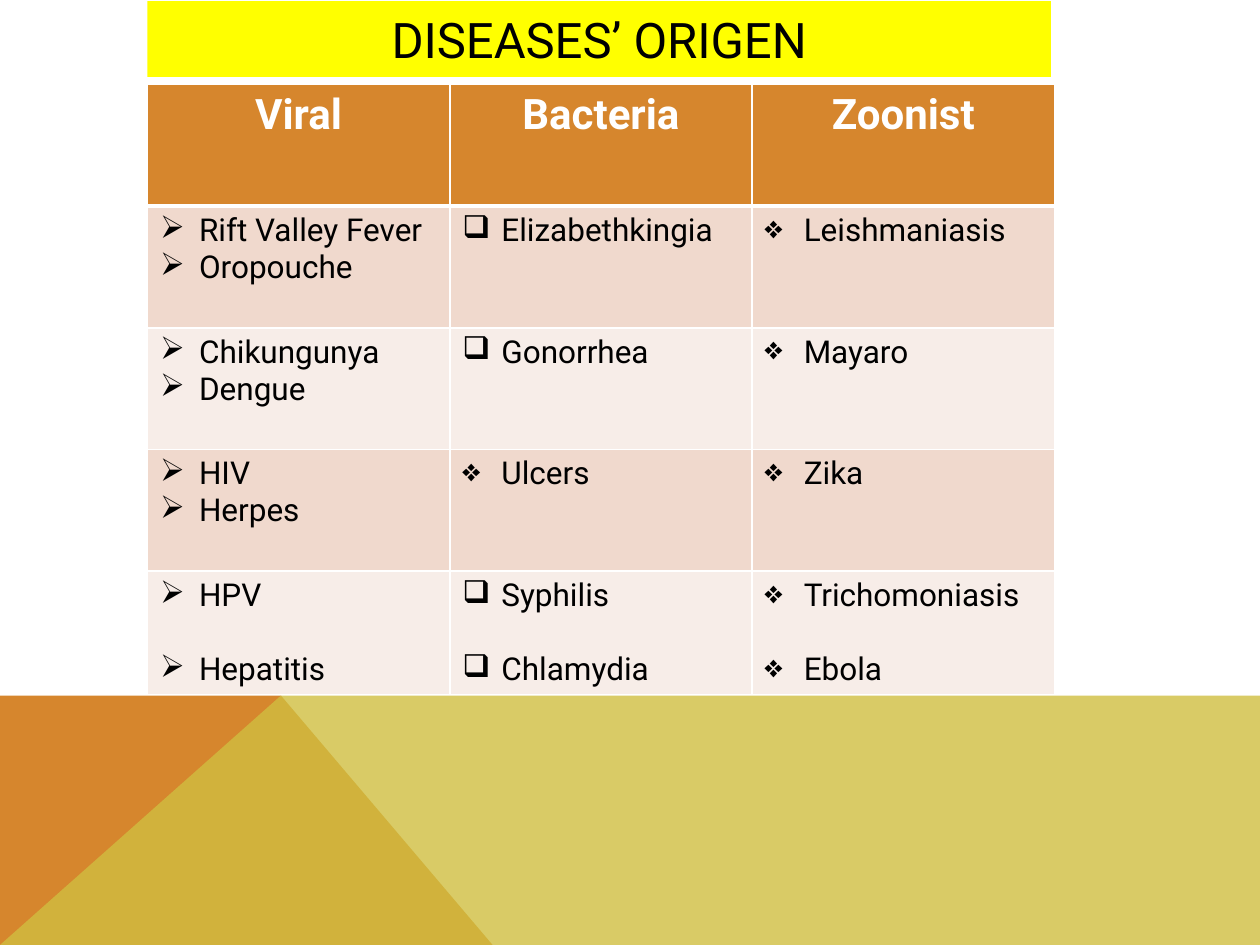
from lxml import etree
from pptx import Presentation
from pptx.dml.color import RGBColor
from pptx.enum.text import MSO_ANCHOR, PP_ALIGN
from pptx.oxml.ns import qn
from pptx.util import Inches, Pt

CENTER, MIDDLE = PP_ALIGN.CENTER, MSO_ANCHOR.MIDDLE
TITLE_ONLY = 5
FONT = "Roboto"

BLACK = RGBColor(0x00, 0x00, 0x00)
WHITE = RGBColor(0xFF, 0xFF, 0xFF)
YELLOW = RGBColor(0xFF, 0xFF, 0x00)
ORANGE = RGBColor(0xD6, 0x86, 0x2D)
OLIVE = RGBColor(0xD0, 0xBE, 0x40)
ROW_TINTS = (RGBColor(0xF0, 0xD9, 0xCD), RGBColor(0xF7, 0xED, 0xE8))

# Slide grid, in inches
WIDTH, HEIGHT = 10, 7.5
LEFT, TABLE_TOP = 1.17, 0.67
COLUMN, ROW = 2.4, 0.966
BAND_TOP, PEAK, SLOPE_END = 5.52, 2.23, 3.91
INDENT = Inches(0.31)
BLANK_LINE = Pt(21)

ARROW, BOX, DIAMOND = "➢", "❑", "❖"
HEADERS = ("Viral", "Bacteria", "Zoonist")
# Each cell: bullet, then its diseases
DISEASES = (
    ((ARROW, "Rift Valley Fever", "Oropouche"), (BOX, "Elizabethkingia"), (DIAMOND, "Leishmaniasis")),
    ((ARROW, "Chikungunya", "Dengue"), (BOX, "Gonorrhea"), (DIAMOND, "Mayaro")),
    ((ARROW, "HIV", "Herpes"), (DIAMOND, "Ulcers"), (DIAMOND, "Zika")),
    ((ARROW, "HPV", "Hepatitis"), (BOX, "Syphilis", "Chlamydia"), (DIAMOND, "Trichomoniasis", "Ebola")),
)


def set_font(paragraph, size, color, bold=False):
    font = paragraph.font
    font.name, font.size, font.bold = FONT, Pt(size), bold
    font.color.rgb = color


def add_band(slide, points, color, opacity=None):
    corners = [(Inches(x), Inches(y)) for x, y in points]
    builder = slide.shapes.build_freeform(*corners[0])
    builder.add_line_segments(corners[1:], close=True)
    band = builder.convert_to_shape()
    band.shadow.inherit = False
    band.line.fill.background()
    band.fill.solid()
    band.fill.fore_color.rgb = color
    if opacity is not None:
        srgb = band.fill._xPr.find(qn("a:solidFill"))[0]
        etree.SubElement(srgb, qn("a:alpha"), val=str(opacity * 1000))


def format_title(slide, text):
    title = slide.shapes.title
    title.left, title.top = Inches(LEFT), Inches(0.01)
    title.width, title.height = Inches(7.17), Inches(0.6)
    title.fill.solid()
    title.fill.fore_color.rgb = YELLOW
    title.text_frame.text = text
    title.text_frame.vertical_anchor = MIDDLE
    heading = title.text_frame.paragraphs[0]
    heading.alignment = CENTER
    set_font(heading, 28, BLACK)


def add_bullet(paragraph, bullet):
    properties = paragraph._p.get_or_add_pPr()
    properties.set("marL", str(INDENT))
    properties.set("indent", str(-INDENT))
    mark = etree.Element(qn("a:buChar"), char=bullet)
    properties.insert_element_before(mark, "a:tabLst", "a:defRPr", "a:extLst")


def style_cell(cell, fill, top=1, bottom=1):
    # Borders come before the fill in the cell's properties
    properties = cell._tc.get_or_add_tcPr()
    for side, points in (("L", 1), ("R", 1), ("T", top), ("B", bottom)):
        border = etree.SubElement(properties, qn(f"a:ln{side}"), w=str(Pt(points)))
        solid = etree.SubElement(border, qn("a:solidFill"))
        etree.SubElement(solid, qn("a:srgbClr"), val=str(WHITE))
    cell.fill.solid()
    cell.fill.fore_color.rgb = fill


def fill_header(cell, text):
    style_cell(cell, ORANGE, bottom=3)
    cell.text = text
    header = cell.text_frame.paragraphs[0]
    header.alignment = CENTER
    set_font(header, 24, WHITE, bold=True)


def fill_diseases(cell, bullet, names, fill, top, gap):
    style_cell(cell, fill, top=top)
    cell.text = "\n".join(names)
    for index, disease in enumerate(cell.text_frame.paragraphs):
        set_font(disease, 18, BLACK)
        add_bullet(disease, bullet)
        if index:
            disease.space_before = gap


def add_disease_table(slide):
    rows, columns = len(DISEASES) + 1, len(HEADERS)
    table = slide.shapes.add_table(
        rows, columns, Inches(LEFT), Inches(TABLE_TOP),
        Inches(COLUMN * columns), Inches(ROW * rows)).table
    for column, text in enumerate(HEADERS):
        fill_header(table.cell(0, column), text)
    for row, origins in enumerate(DISEASES, start=1):
        # The last row sets its diseases one blank line apart
        gap = BLANK_LINE if row == len(DISEASES) else Pt(0)
        for column, (bullet, *names) in enumerate(origins):
            fill_diseases(table.cell(row, column), bullet, names,
                          ROW_TINTS[(row - 1) % 2], 3 if row == 1 else 1, gap)


def main():
    presentation = Presentation()
    presentation.slide_width, presentation.slide_height = Inches(WIDTH), Inches(HEIGHT)
    slide = presentation.slides.add_slide(presentation.slide_layouts[TITLE_ONLY])

    # Coloured bands along the bottom
    add_band(slide, [(0, HEIGHT), (0, BAND_TOP), (PEAK, BAND_TOP), (SLOPE_END, HEIGHT)], ORANGE)
    add_band(slide, [(0, HEIGHT), (PEAK, BAND_TOP), (WIDTH, BAND_TOP), (WIDTH, HEIGHT)], OLIVE, 80)

    # Title and table of origins
    format_title(slide, "DISEASES’ ORIGEN")
    add_disease_table(slide)

    presentation.save("out.pptx")


if __name__ == "__main__":
    main()
